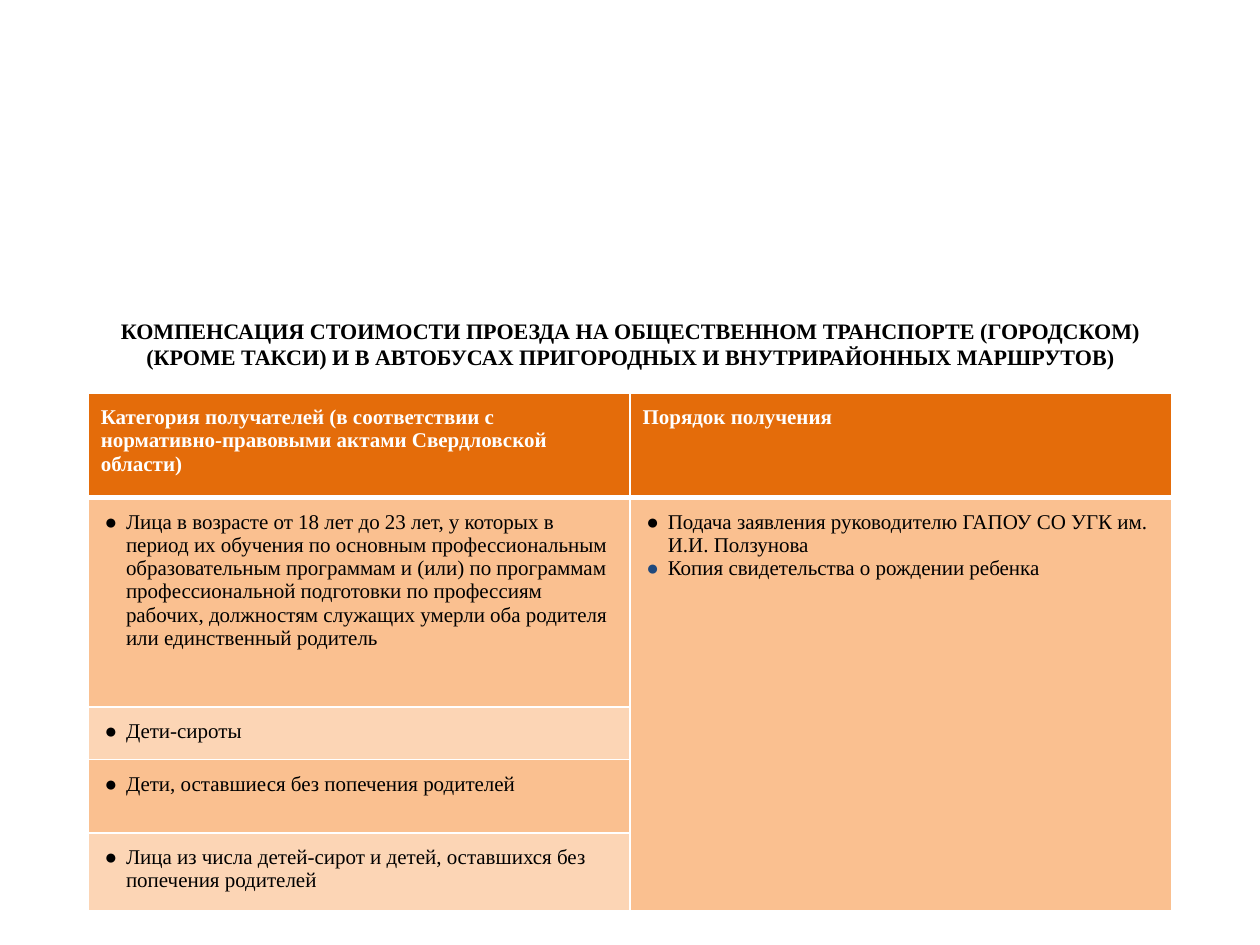
from lxml.etree import SubElement as Sub
from pptx import Presentation as Deck
from pptx.dml.color import RGBColor as Rgb
from pptx.enum.text import MSO_ANCHOR as Anchor, PP_ALIGN as Align
from pptx.oxml.ns import qn
from pptx.util import Inches as In, Pt

WIDE, HIGH = In(10), In(7.5)
FONT = "Times New Roman"
HUES = {
    "ink": "000000", "white": "FFFFFF", "head": "E46C0A",
    "dark": "FAC090", "light": "FCD5B5", "blue": "1F497D",
}

TITLE = ("КОМПЕНСАЦИЯ СТОИМОСТИ ПРОЕЗДА НА ОБЩЕСТВЕННОМ ТРАНСПОРТЕ (ГОРОДСКОМ) "
         "(КРОМЕ ТАКСИ) И В АВТОБУСАХ ПРИГОРОДНЫХ И ВНУТРИРАЙОННЫХ МАРШРУТОВ)")
HEADS = [
    "Категория получателей (в соответствии с нормативно-правовыми актами "
    "Свердловской области)",
    "Порядок получения",
]
GROUPS = [
    "Лица в возрасте от 18 лет до 23 лет, у которых в период их обучения по "
    "основным профессиональным образовательным программам и (или) по программам "
    "профессиональной подготовки по профессиям рабочих, должностям служащих "
    "умерли оба родителя или единственный родитель",
    "Дети-сироты",
    "Дети, оставшиеся без попечения родителей",
    "Лица из числа детей-сирот и детей, оставшихся без попечения родителей",
]
STEPS = [
    "Подача заявления руководителю ГАПОУ СО УГК им. И.И. Ползунова",
    "Копия свидетельства о рождении ребенка",
]
ROWS = [0.83, 1.66, 0.42, 0.58, 0.62]


def tint(hue):
    return Rgb.from_string(HUES[hue])


def mark(para, hue):
    """Give a paragraph a hanging round bullet."""
    props = para._p.get_or_add_pPr()
    props.set("marL", str(In(0.2)))
    props.set("indent", str(In(-0.17)))
    Sub(Sub(props, qn("a:buClr")), qn("a:srgbClr")).set("val", HUES[hue])
    Sub(props, qn("a:buFont")).set("typeface", FONT)
    Sub(props, qn("a:buChar")).set("char", "●")


def write(para, text, size=12, hue="ink", bold=False, align=Align.LEFT, dot=None):
    para.alignment = align
    if dot:
        mark(para, dot)
    run = para.add_run()
    run.text = text
    font = run.font
    font.name, font.size, font.bold = FONT, Pt(size), bold
    font.color.rgb = tint(hue)


def edge(cell, **sides):
    """Draw white borders; widths are in points, 1 unless given."""
    props = cell._tc.get_or_add_tcPr()
    for at, side in enumerate("LRTB"):
        line = props.makeelement(qn("a:ln" + side), {"w": str(Pt(sides.get(side, 1)))})
        Sub(Sub(line, qn("a:solidFill")), qn("a:srgbClr")).set("val", HUES["white"])
        props.insert(at, line)


def dress(cell, hue, **sides):
    cell.margin_left = cell.margin_right = In(0.1)
    cell.margin_top = cell.margin_bottom = In(0.1)
    cell.fill.solid()
    cell.fill.fore_color.rgb = tint(hue)
    edge(cell, **sides)


def title(slide):
    box = slide.shapes.add_textbox(int(WIDE * 0.075), In(2.33), int(WIDE * 0.85), In(0.8))
    frame = box.text_frame
    frame.word_wrap = True
    frame.vertical_anchor = Anchor.MIDDLE
    write(frame.paragraphs[0], TITLE, size=12.6, bold=True, align=Align.CENTER)


def grid(slide):
    table = slide.shapes.add_table(
        len(ROWS), len(HEADS), In(0.7), In(3.12), In(8.6), In(sum(ROWS))).table
    for row, tall in zip(table.rows, ROWS):
        row.height = In(tall)

    # Header row
    for col, text in enumerate(HEADS):
        cell = table.cell(0, col)
        dress(cell, "head", B=3)
        write(cell.text_frame.paragraphs[0], text, hue="white", bold=True)

    # Recipient groups, in alternating bands
    for row, text in enumerate(GROUPS, 1):
        hue = "dark" if row % 2 else "light"
        top = 3 if row == 1 else 1
        for col in range(len(HEADS)):
            dress(table.cell(row, col), hue if col == 0 else "dark", T=top)
        write(table.cell(row, 0).text_frame.paragraphs[0], text, dot="ink")

    # Steps, in one cell beside all the groups
    cell = table.cell(1, 1)
    cell.merge(table.cell(len(GROUPS), 1))
    frame = cell.text_frame
    write(frame.paragraphs[0], STEPS[0], dot="ink")
    write(frame.add_paragraph(), STEPS[1], dot="blue")


def main():
    deck = Deck()
    deck.slide_width, deck.slide_height = WIDE, HIGH
    slide = deck.slides.add_slide(deck.slide_layouts[6])
    title(slide)
    grid(slide)
    deck.save("out.pptx")


if __name__ == "__main__":
    main()
